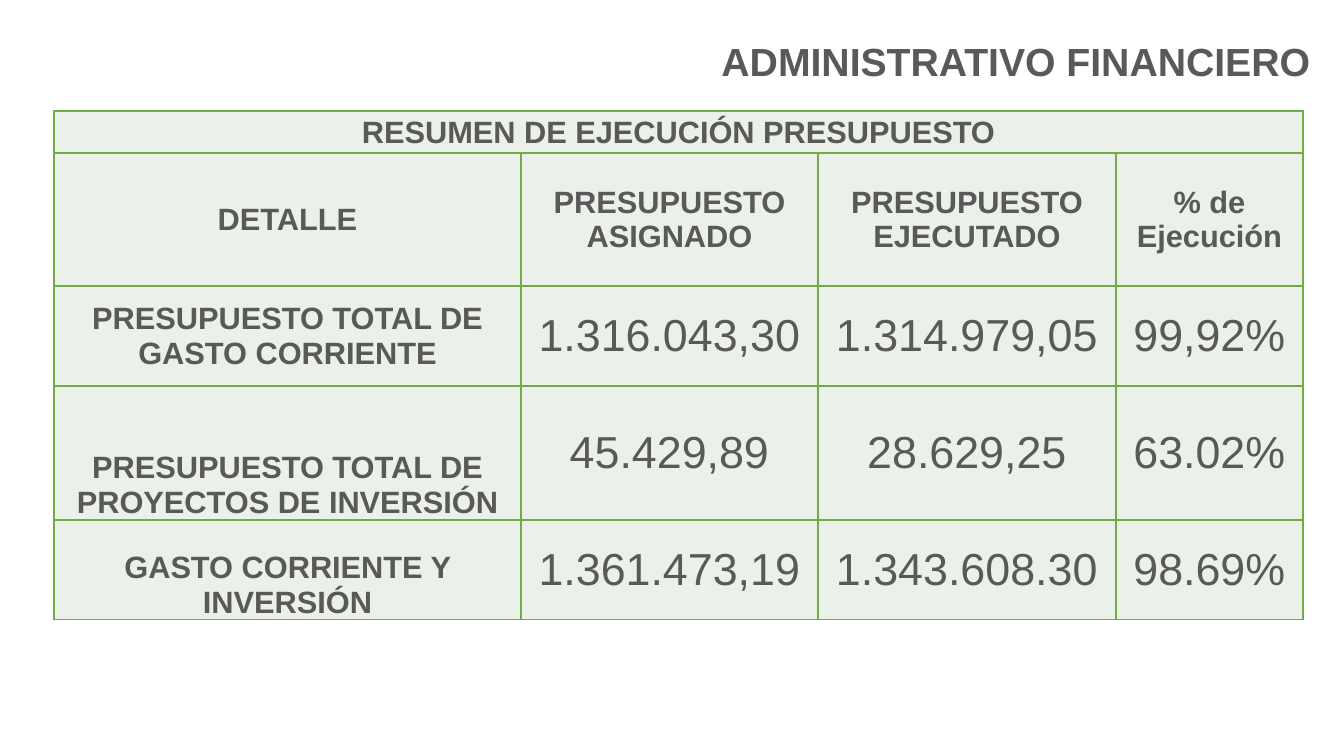
"""Builds the budget execution summary slide."""
import pptx
import pptx.util
import pptx.dml.color
import pptx.enum.text
import pptx.oxml

PX = 914400 / 100.8
ANCHOR = pptx.enum.text.MSO_ANCHOR
ALIGN = pptx.enum.text.PP_ALIGN
THEME = {
    "font": "Arial",
    "text": "595959",
    "cell": "EBF1E9",
    "border": "70AD47",
    "title": 28,
    "label": 22,
    "figure": 32,
}


def px(length):
    return pptx.util.Emu(round(length * PX))


def write(frame, text, size, bold, align):
    para = frame.paragraphs[0]
    para.alignment = align
    span = para.add_run()
    span.text = text
    span.font.color.rgb = pptx.dml.color.RGBColor.from_string(THEME["text"])
    formats = {"name": THEME["font"], "size": pptx.util.Pt(THEME[size]), "bold": bold}
    for name, value in formats.items():
        setattr(span.font, name, value)


deck = pptx.Presentation()
deck.slide_width, deck.slide_height = px(1344), px(756)
page = deck.slides.add_slide(deck.slide_layouts[6])

column_widths = [467, 297, 298, 187]
row_heights = [42, 133, 100, 134, 100]
rows = [
    ["RESUMEN DE EJECUCIÓN PRESUPUESTO", "", "", ""],
    ["DETALLE", "PRESUPUESTO ASIGNADO", "PRESUPUESTO EJECUTADO", "% de Ejecución"],
    ["PRESUPUESTO TOTAL DE GASTO CORRIENTE", "1.316.043,30", "1.314.979,05", "99,92%"],
    ["PRESUPUESTO TOTAL DE PROYECTOS DE INVERSIÓN", "45.429,89", "28.629,25", "63.02%"],
    ["GASTO CORRIENTE Y INVERSIÓN", "1.361.473,19", "1.343.608.30", "98.69%"],
]

table = page.shapes.add_table(
    len(rows), len(column_widths), px(54), px(111), px(sum(column_widths)), px(sum(row_heights))
).table
table.first_row = table.horz_banding = False
for column, width in zip(table.columns, column_widths):
    column.width = px(width)
for row, height in zip(table.rows, row_heights):
    row.height = px(height)
table.cell(0, 0).merge(table.cell(0, len(column_widths) - 1))

for row_index, texts in enumerate(rows):
    for column_index, text in enumerate(texts):
        cell = table.cell(row_index, column_index)
        is_figure = row_index > 1 and column_index > 0
        at_bottom = row_index > 2 and column_index == 0
        inset = px(0 if is_figure else 1)
        formats = {
            "margin_left": inset,
            "margin_right": inset,
            "margin_top": inset,
            "margin_bottom": 0,
            "vertical_anchor": ANCHOR.BOTTOM if at_bottom else ANCHOR.MIDDLE,
        }
        for name, value in formats.items():
            setattr(cell, name, value)
        for side in ("lnL", "lnR", "lnT", "lnB"):
            cell._tc.get_or_add_tcPr().append(pptx.oxml.parse_xml(
                f'<a:{side} xmlns:a="http://schemas.openxmlformats.org/drawingml/2006/main" '
                f'w="{pptx.util.Pt(1)}"><a:solidFill><a:srgbClr val="{THEME["border"]}"/>'
                f'</a:solidFill></a:{side}>'
            ))
        cell.fill.solid()
        cell.fill.fore_color.rgb = pptx.dml.color.RGBColor.from_string(THEME["cell"])
        if text:
            size = "figure" if is_figure else "label"
            write(cell.text_frame, text, size, not is_figure, ALIGN.CENTER)

title_box = page.shapes.add_textbox(px(225), px(32), px(1095), px(57))
title_box.text_frame.word_wrap = True
title_box.text_frame.auto_size = pptx.enum.text.MSO_AUTO_SIZE.SHAPE_TO_FIT_TEXT
write(title_box.text_frame, "ADMINISTRATIVO FINANCIERO", "title", True, ALIGN.RIGHT)

deck.save("out.pptx")
